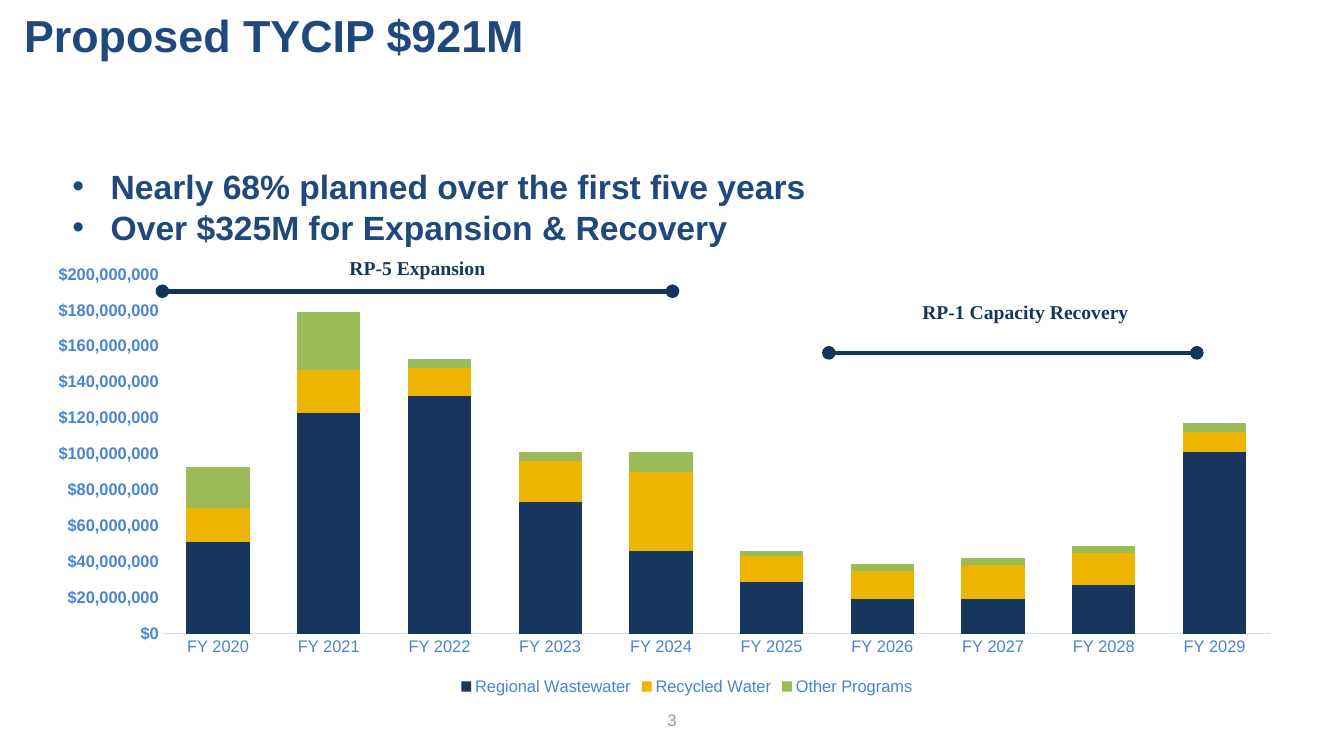
import functools

import pptx
import pptx.chart.data
import pptx.dml.color
import pptx.enum.chart
import pptx.enum.shapes
import pptx.enum.text
import pptx.oxml
import pptx.oxml.ns
import pptx.util

RGBColor = pptx.dml.color.RGBColor
HEADING_BLUE = RGBColor(0x1F, 0x49, 0x7D)
NAVY = RGBColor(0x17, 0x36, 0x5D)
SPAN_NAVY = RGBColor(0x15, 0x35, 0x5D)
AXIS_BLUE = RGBColor(0x47, 0x85, 0xD1)
AXIS_LINE = RGBColor(0xD4, 0xE3, 0xF4)
GOLD = RGBColor(0xEE, 0xB5, 0x00)
GREEN = RGBColor(0x9B, 0xBB, 0x59)
PAGE_GRAY = RGBColor(0x8D, 0x95, 0xAA)

ANCHOR = pptx.enum.text.MSO_ANCHOR
CENTER = pptx.enum.text.PP_ALIGN.CENTER
Pt = pptx.util.Pt


def apply_format(target, formats):
    """Set each attribute; dotted names reach into nested objects."""
    for name, value in formats.items():
        *owners, last = name.split(".")
        setattr(functools.reduce(getattr, owners, target), last, value)


def font_format(size, color, bold=False, name="Arial"):
    return {"size": Pt(size), "bold": bold, "name": name, "color.rgb": color}


def add_xml(parent, tag, index=None, **attributes):
    element = pptx.oxml.parse_xml(f"<{tag} {pptx.oxml.ns.nsdecls(tag.split(':')[0])}/>")
    for name, value in attributes.items():
        element.set(name, str(value))
    parent.insert(len(parent) if index is None else index, element)
    return element


class BudgetSlide:
    """Holds the slide and its styles; lengths are percent of the slide's size."""

    title_font = font_format(32, HEADING_BLUE, True)
    point_font = font_format(24, HEADING_BLUE, True)
    span_font = font_format(14, NAVY, True, "Times New Roman")
    page_font = font_format(12, PAGE_GRAY)
    axis_font = font_format(12, AXIS_BLUE)

    def __init__(self, deck):
        self.width, self.height = deck.slide_width, deck.slide_height
        self.slide = deck.slides.add_slide(deck.slide_layouts[6])

    def place(self, *shares):
        sides = (self.width, self.height) * 2
        return [round(side * share / 100) for side, share in zip(sides, shares)]

    def text(self, box, lines, font, anchor=ANCHOR.TOP, align=None, bulleted=False):
        frame = self.slide.shapes.add_textbox(*self.place(*box)).text_frame
        apply_format(frame, {"word_wrap": True, "vertical_anchor": anchor})
        frame.text = "\n".join(lines)
        for paragraph in frame.paragraphs:
            if bulleted:
                properties = paragraph._p.get_or_add_pPr()
                hang = pptx.util.Inches(0.38)
                properties.set("marL", str(hang))
                properties.set("indent", str(-hang))
                add_xml(properties, "a:buFont", typeface="Arial")
                add_xml(properties, "a:buChar", char="•")
            paragraph.alignment = align
            apply_format(paragraph.runs[0].font, font)

    def span(self, left, right, y, label, label_box):
        """A round-ended time span with its label."""
        bar = self.slide.shapes.add_connector(
            pptx.enum.shapes.MSO_CONNECTOR.STRAIGHT, *self.place(left, y, right, y))
        apply_format(bar.line, {"width": Pt(3.25), "color.rgb": SPAN_NAVY})
        for end in ("a:headEnd", "a:tailEnd"):
            add_xml(bar.line._get_or_add_ln(), end, type="oval")
        add_xml(bar._element.spPr, "a:effectLst")
        self.text(label_box, [label], self.span_font, align=CENTER)

    def stacked_chart(self, box, categories, programs, inner_plot):
        data = pptx.chart.data.CategoryChartData(number_format='"$"#,##0')
        data.categories = categories
        for program, (_, millions) in programs.items():
            data.add_series(program, [value * 1_000_000 for value in millions])
        chart = self.slide.shapes.add_chart(
            pptx.enum.chart.XL_CHART_TYPE.COLUMN_STACKED, *self.place(*box), data).chart
        apply_format(chart, {"has_title": False, "has_legend": True})
        apply_format(chart.font, font_format(10, HEADING_BLUE, name="Times New Roman"))

        # Columns
        plot = chart.plots[0]
        apply_format(plot, {"gap_width": 75, "overlap": 100, "vary_by_categories": False})
        for series, (color, _) in zip(plot.series, programs.values()):
            series.format.fill.solid()
            series.format.fill.fore_color.rgb = color

        # Axes and legend
        no_tick = pptx.enum.chart.XL_TICK_MARK.NONE
        for axis in (chart.category_axis, chart.value_axis):
            apply_format(axis, {"major_tick_mark": no_tick, "minor_tick_mark": no_tick,
                                "has_major_gridlines": False})
            apply_format(axis.tick_labels.font, self.axis_font)
        apply_format(chart.category_axis.format.line,
                     {"width": Pt(0.75), "color.rgb": AXIS_LINE})
        chart.value_axis.format.line.fill.background()
        apply_format(chart.value_axis, {
            "minimum_scale": 0, "maximum_scale": 200_000_000, "major_unit": 20_000_000,
            "tick_labels.font.bold": True, "tick_labels.number_format": '"$"#,##0',
            "tick_labels.number_format_is_linked": False})
        apply_format(chart.legend, {
            "position": pptx.enum.chart.XL_LEGEND_POSITION.BOTTOM, "include_in_layout": False})
        apply_format(chart.legend.font, self.axis_font)

        # Fixed plot area
        area = chart._chartSpace.chart.plotArea
        for layout in area.findall(pptx.oxml.ns.qn("c:layout")):
            area.remove(layout)
        manual = add_xml(add_xml(area, "c:layout", 0), "c:manualLayout")
        add_xml(manual, "c:layoutTarget", val="inner")
        for mode in ("xMode", "yMode"):
            add_xml(manual, f"c:{mode}", val="edge")
        for side, share in zip("xywh", inner_plot):
            add_xml(manual, f"c:{side}", val=share / 100)


def main():
    deck = pptx.Presentation()
    apply_format(deck, {"slide_width": pptx.util.Inches(13.33),
                        "slide_height": pptx.util.Inches(7.5)})
    budget = BudgetSlide(deck)

    # Spending by fiscal year, in millions
    budget.stacked_chart(
        (4.35, 34.13, 91.3, 58.4),
        [f"FY {year}" for year in range(2020, 2030)],
        {"Regional Wastewater": (NAVY, (51, 123, 132, 73, 46, 29, 19, 19, 27, 101)),
         "Recycled Water": (GOLD, (19, 24, 16, 23, 44, 14, 16, 19, 18, 11)),
         "Other Programs": (GREEN, (23, 32, 5, 5, 11, 3, 4, 4, 4, 5))},
        inner_plot=(6.2, 3.7, 92.5, 81.4))

    # Title, page number and key points
    budget.text((1.05, -3.73, 90.02, 16.67), ["Proposed TYCIP $921M"],
                budget.title_font, ANCHOR.MIDDLE)
    budget.text((38.33, 92.53, 23.33, 5.33), ["3"], budget.page_font, ANCHOR.MIDDLE, CENTER)
    budget.text((4.65, 21.33, 67.52, 12.13),
                ["Nearly 68% planned over the first five years",
                 "Over $325M for Expansion & Recovery"],
                budget.point_font, bulleted=True)

    # Project time spans
    budget.span(12.08, 50.04, 38.53, "RP-5 Expansion", (18.75, 33.2, 24.61, 4.53))
    budget.span(61.67, 89.05, 46.67, "RP-1 Capacity Recovery", (61.67, 39.07, 29.26, 4.53))

    deck.save("out.pptx")


if __name__ == "__main__":
    main()
